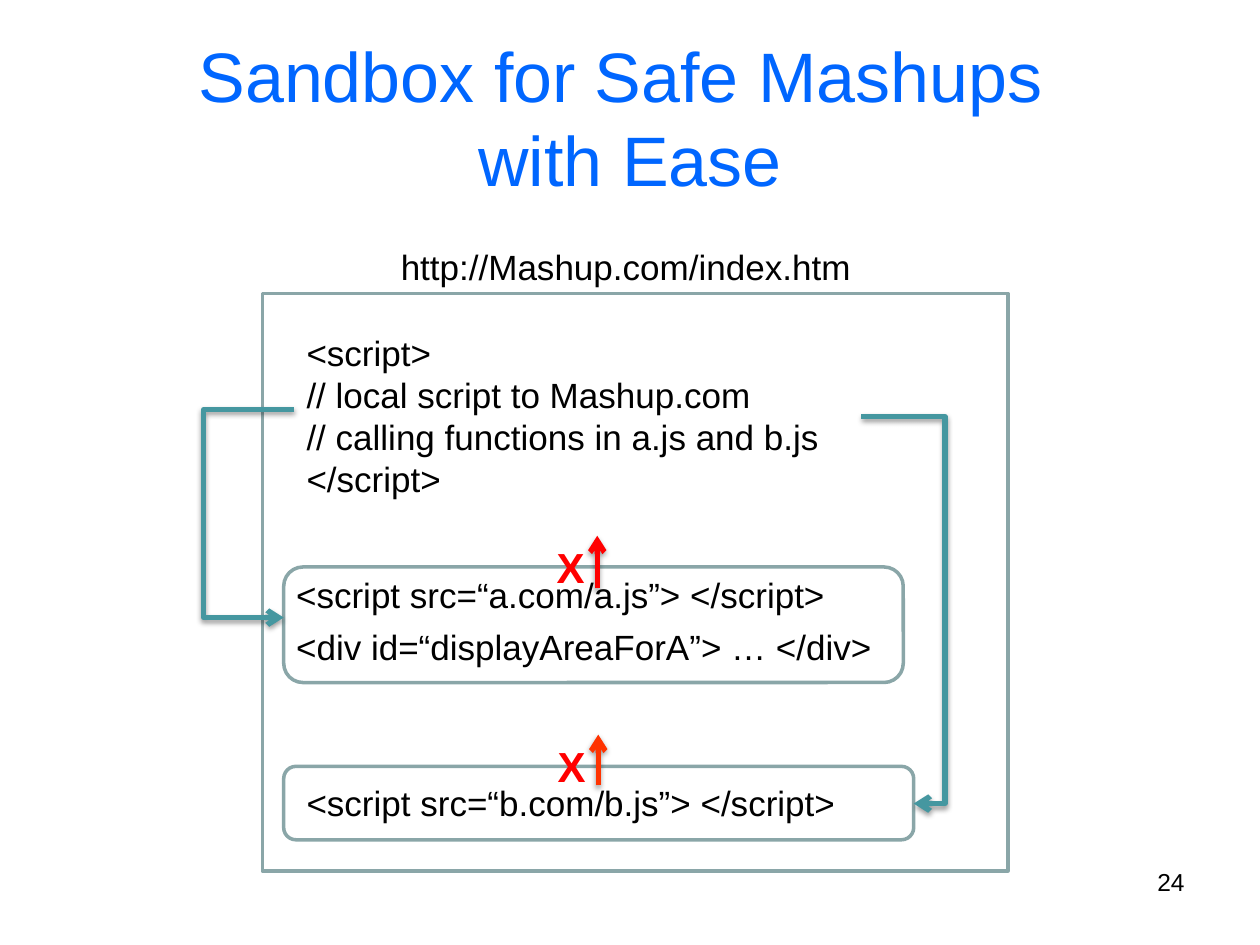
from pptx import Presentation
from pptx.dml.color import RGBColor
from pptx.enum.shapes import MSO_CONNECTOR as Link, MSO_SHAPE as Preset
from pptx.enum.text import MSO_ANCHOR as Anchor, PP_ALIGN as Align
from pptx.oxml import parse_xml
from pptx.oxml.ns import nsdecls
from pptx.util import Cm, Pt

COLORS = {
    "title": "0066FF",
    "text": "000000",
    "frame": "8AA6A8",
    "call": "4597A0",
    "blocked": "FF0000",
    "blocked_alt": "FF3300",
    "shadow": "000000",
}


def color(name):
    """Return the named colour."""
    return RGBColor.from_string(COLORS[name])


def add_text(slide, box, lines, size=20, tone="text", bold=False,
             align=Align.LEFT, anchor=Anchor.TOP, wrap=True):
    """Add a text box with one paragraph for each line."""
    frame = slide.shapes.add_textbox(*map(Cm, box)).text_frame
    frame.word_wrap = wrap
    frame.vertical_anchor = anchor
    font_format = {"name": "Arial", "size": Pt(size), "bold": bold}
    for index, line in enumerate(lines):
        paragraph = frame.add_paragraph() if index else frame.paragraphs[0]
        paragraph.text = line
        paragraph.alignment = align
        for run in paragraph.runs:
            for key, value in font_format.items():
                setattr(run.font, key, value)
            run.font.color.rgb = color(tone)


def add_frame(slide, preset, box):
    """Add an unfilled outline shape."""
    shape = slide.shapes.add_shape(preset, *map(Cm, box))
    shape.shadow.inherit = False
    shape.fill.background()
    shape.line.color.rgb = color("frame")
    shape.line.width = Pt(2)


def add_arrow(slide, start, end, tone, bend_x=None):
    """Add a shadowed arrow, bent at the given x if there is one."""
    kind = Link.STRAIGHT if bend_x is None else Link.ELBOW
    arrow = slide.shapes.add_connector(kind, *map(Cm, start + end))
    arrow.line.color.rgb = color(tone)
    arrow.line.width = Pt(3)
    properties = arrow.element.spPr
    properties.find(".//{*}ln").append(
        parse_xml(f'<a:tailEnd {nsdecls("a")} type="arrow"/>'))
    if bend_x is not None:
        ratio = round((bend_x - start[0]) / (end[0] - start[0]) * 100000)
        properties.find(".//{*}avLst").append(parse_xml(
            f'<a:gd {nsdecls("a")} name="adj1" fmla="val {ratio}"/>'))
    properties.append(parse_xml(
        f'<a:effectLst {nsdecls("a")}>'
        f'<a:outerShdw blurRad="{Pt(3.1)}" dist="{Pt(1.6)}" dir="5400000" rotWithShape="0">'
        f'<a:srgbClr val="{COLORS["shadow"]}"><a:alpha val="38000"/></a:srgbClr>'
        '</a:outerShdw></a:effectLst>'))


def add_blocked_call(slide, x, top, length, tone):
    """Add an upward arrow with a red cross mark on its left."""
    add_arrow(slide, (x, top + length), (x, top), tone)
    add_text(slide, (x - 1.07, top, 1.09, 1.27), ["X"], size=24,
             tone="blocked", bold=True, wrap=False)


def main():
    """Build the slide and save it."""
    presentation = Presentation()
    presentation.slide_width, presentation.slide_height = Cm(25.4), Cm(19.05)
    slide = presentation.slides.add_slide(presentation.slide_layouts[6])

    add_text(slide, (0, 0.76, 25.4, 3.18), ["Sandbox for Safe Mashups \vwith Ease"],
             size=40, tone="title", align=Align.CENTER, anchor=Anchor.MIDDLE)
    add_text(slide, (18.21, 17.35, 5.92, 1.32), ["24"], size=14, align=Align.RIGHT)

    add_frame(slide, Preset.RECTANGLE, (5.29, 5.92, 15.03, 11.64))
    add_text(slide, (7.83, 4.83, 9.74, 1.11), ["http://Mashup.com/index.htm"])
    add_text(slide, (5.72, 11.43, 14.18, 1.11), ["<script src=“a.com/a.js”> </script>"])
    add_text(slide, (5.93, 15.62, 11.64, 1.11), ["<script src=“b.com/b.js”> </script>"])
    add_text(slide, (5.93, 6.56, 11.43, 3.68), [
        "<script>",
        "// local script to Mashup.com",
        "// calling functions in a.js and b.js",
        "</script>",
    ])
    add_text(slide, (5.72, 12.49, 13.55, 1.11), ["<div id=“displayAreaForA”> … </div>"])
    add_frame(slide, Preset.ROUNDED_RECTANGLE, (5.72, 11.43, 12.49, 2.33))
    add_frame(slide, Preset.ROUNDED_RECTANGLE, (5.72, 15.45, 12.7, 1.48))

    add_arrow(slide, (5.93, 8.26), (5.72, 12.45), "call", bend_x=4.11)
    add_arrow(slide, (17.36, 8.4), (18.42, 16.2), "call", bend_x=19.05)
    add_blocked_call(slide, 12.04, 10.8, 1.06, "blocked")
    add_blocked_call(slide, 12.06, 14.81, 1.02, "blocked_alt")

    presentation.save("out.pptx")


if __name__ == "__main__":
    main()
